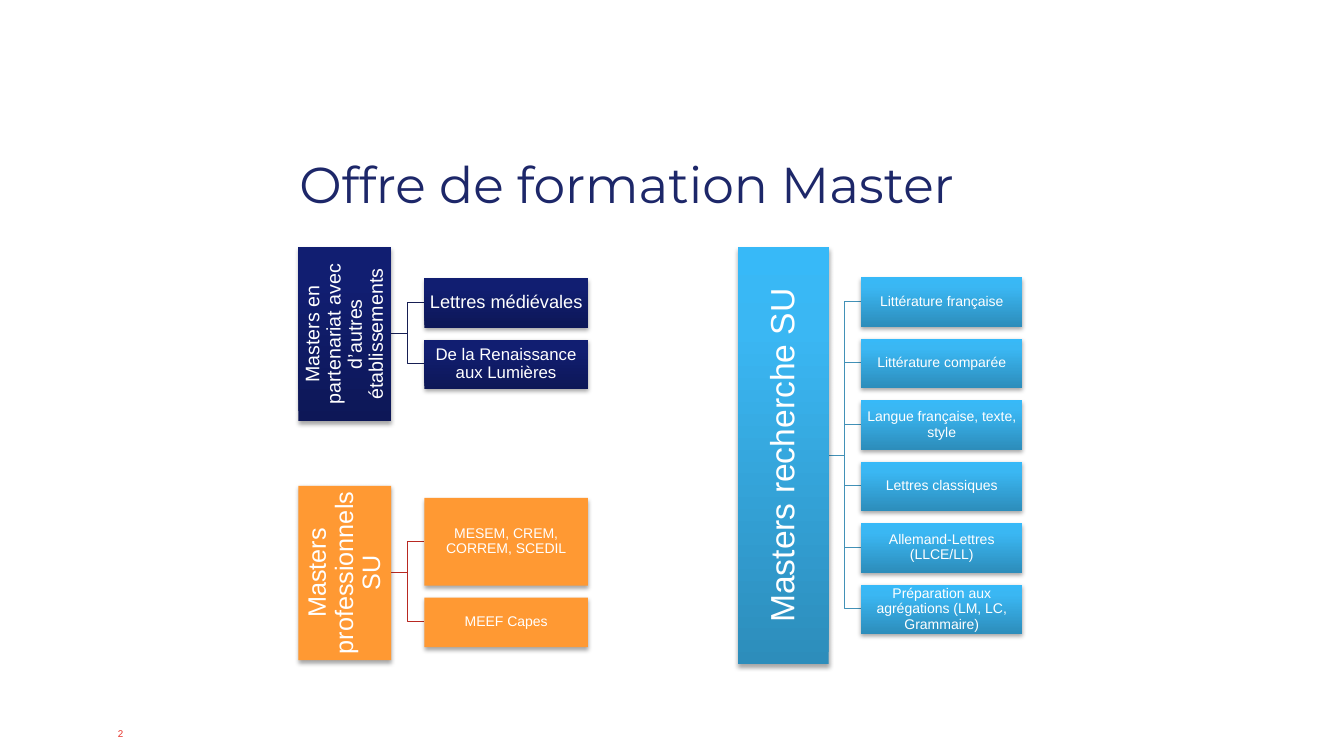
"""Builds the slide on the master's programmes: three labelled brackets of courses."""
from copy import deepcopy

from lxml import etree
from pptx import Presentation
from pptx.dml.color import RGBColor
from pptx.enum.shapes import MSO_SHAPE
from pptx.enum.text import MSO_ANCHOR, PP_ALIGN
from pptx.oxml.ns import qn
from pptx.util import Emu, Pt

RECTANGLE = MSO_SHAPE.RECTANGLE
MIDDLE, BOTTOM = MSO_ANCHOR.MIDDLE, MSO_ANCHOR.BOTTOM
LEFT, CENTER = PP_ALIGN.LEFT, PP_ALIGN.CENTER
PX = 9144

COLORS = {
    "title": "1D2769", "page": "E6332A", "label": "FFFFFF", "shadow": "000000",
    "navy_low": "0D1757", "navy_mid": "111E71", "navy_top": "0F1C73", "navy_line": "171F54",
    "orange": "FF9933", "orange_line": "B82922",
    "sky_low": "2D8DBB", "sky_mid": "3AB7F3", "sky_top": "37B9F8", "sky_line": "4291B7",
}
FILLS = {
    "navy": ["navy_low", "navy_mid", "navy_top"],
    "orange": ["orange"],
    "sky": ["sky_low", "sky_mid", "sky_top"],
}
STOPS = [0, 0.8, 1]
LEAF_GAP = 12
LEAF_HEIGHT = 49


def rgb(name):
    return RGBColor.from_string(COLORS[name])


class Slide:
    """Holds the current slide and draws its kinds of element."""

    def __init__(self, presentation):
        self.shapes = presentation.slides.add_slide(presentation.slide_layouts[6]).shapes

    def fill_text(self, frame, text, size, color, font="Arial", align=LEFT,
                  anchor=BOTTOM, inset=(4, 0), spacing=0.9, wrap=True):
        frame.word_wrap = wrap
        frame.vertical_anchor = anchor
        frame.margin_left = frame.margin_right = Emu(inset[0] * PX)
        frame.margin_top = frame.margin_bottom = Emu(inset[1] * PX)
        paragraph = frame.paragraphs[0]
        paragraph.text = text
        paragraph.alignment = align
        paragraph.line_spacing = spacing
        paragraph.font.name = font
        paragraph.font.size = Pt(size)
        paragraph.font.color.rgb = rgb(color)

    def text(self, box, *args, **style):
        area = self.shapes.add_textbox(*(Emu(v * PX) for v in box))
        self.fill_text(area.text_frame, *args, **style)

    def paint(self, shape, names):
        if len(names) == 1:
            shape.fill.solid()
            shape.fill.fore_color.rgb = rgb(names[0])
            return
        shape.fill.gradient()
        shape.fill.gradient_angle = 90
        stop_list = shape._element.spPr.find(".//" + qn("a:gsLst"))
        stop_list.append(deepcopy(stop_list[0]))
        for stop, position, name in zip(shape.fill.gradient_stops, STOPS, names):
            stop.position = position
            stop.color.rgb = rgb(name)

    def cast_shadow(self, shape):
        shape.shadow.inherit = False
        effects = shape._element.spPr.find(qn("a:effectLst"))
        outer = etree.SubElement(effects, qn("a:outerShdw"), blurRad="40000", dist="23000",
                                 dir="5400000", rotWithShape="0")
        color = etree.SubElement(outer, qn("a:srgbClr"), val=COLORS["shadow"])
        etree.SubElement(color, qn("a:alpha"), val="35000")

    def block(self, box, text, size, theme, upright=False):
        shape = self.shapes.add_shape(RECTANGLE, *(Emu(v * PX) for v in box))
        self.paint(shape, FILLS[theme])
        shape.line.fill.background()
        self.cast_shadow(shape)
        self.fill_text(shape.text_frame, text, size, "label", align=CENTER,
                       anchor=MIDDLE, inset=(1, 1))
        if upright:
            shape._element.txBody.bodyPr.set("vert", "vert270")

    def elbow(self, start, end, color):
        bend = (start[0] + end[0]) // 2
        builder = self.shapes.build_freeform(*start, scale=PX)
        builder.add_line_segments([(bend, start[1]), (bend, end[1]), end], close=False)
        branch = builder.convert_to_shape()
        branch.fill.background()
        branch.line.color.rgb = rgb(color)
        branch.line.width = Pt(0.75)
        branch.shadow.inherit = False

    def bracket(self, theme, bar, title, title_size, leaf_left, leaf_width, courses):
        left, top, width, height = bar
        middle = top + height // 2
        total = sum(course[2] for course in courses) + LEAF_GAP * (len(courses) - 1)
        leaf_top = middle - total // 2
        leaves = []
        for name, size, leaf_height in courses:
            leaves.append(((leaf_left, leaf_top, leaf_width, leaf_height), name, size))
            self.elbow((left + width, middle), (leaf_left, leaf_top + leaf_height // 2),
                       theme + "_line")
            leaf_top += leaf_height + LEAF_GAP
        self.block(bar, title, title_size, theme, upright=True)
        for box, name, size in leaves:
            self.block(box, name, size, theme)


def main():
    presentation = Presentation()
    presentation.slide_width = Emu(1333 * PX)
    presentation.slide_height = Emu(750 * PX)
    slide = Slide(presentation)

    slide.text((113, 722, 25, 12), "2", 7, "page", spacing=1, wrap=False)
    slide.text((293, 108, 824, 105), "Offre de formation Master", 36, "title",
               font="Montserrat")

    slide.bracket("navy", (296, 245, 92, 173),
                  "Masters en partenariat avec d’autres établissements", 14, 421, 162,
                  [("Lettres médiévales", 13, LEAF_HEIGHT),
                   ("De la Renaissance aux Lumières", 12, LEAF_HEIGHT)])
    slide.bracket("orange", (296, 482, 92, 173), "Masters professionnels SU", 18, 421, 162,
                  [("MESEM, CREM, CORREM, SCEDIL", 10, 87),
                   ("MEEF Capes", 10, LEAF_HEIGHT)])
    research = ["Littérature française", "Littérature comparée",
                "Langue française, texte, style", "Lettres classiques",
                "Allemand-Lettres (LLCE/LL)",
                "Préparation aux agrégations (LM, LC, Grammaire)"]
    slide.bracket("sky", (732, 245, 90, 414), "Masters recherche SU", 24, 854, 160,
                  [(name, 10, LEAF_HEIGHT) for name in research])

    presentation.save("out.pptx")


if __name__ == "__main__":
    main()
